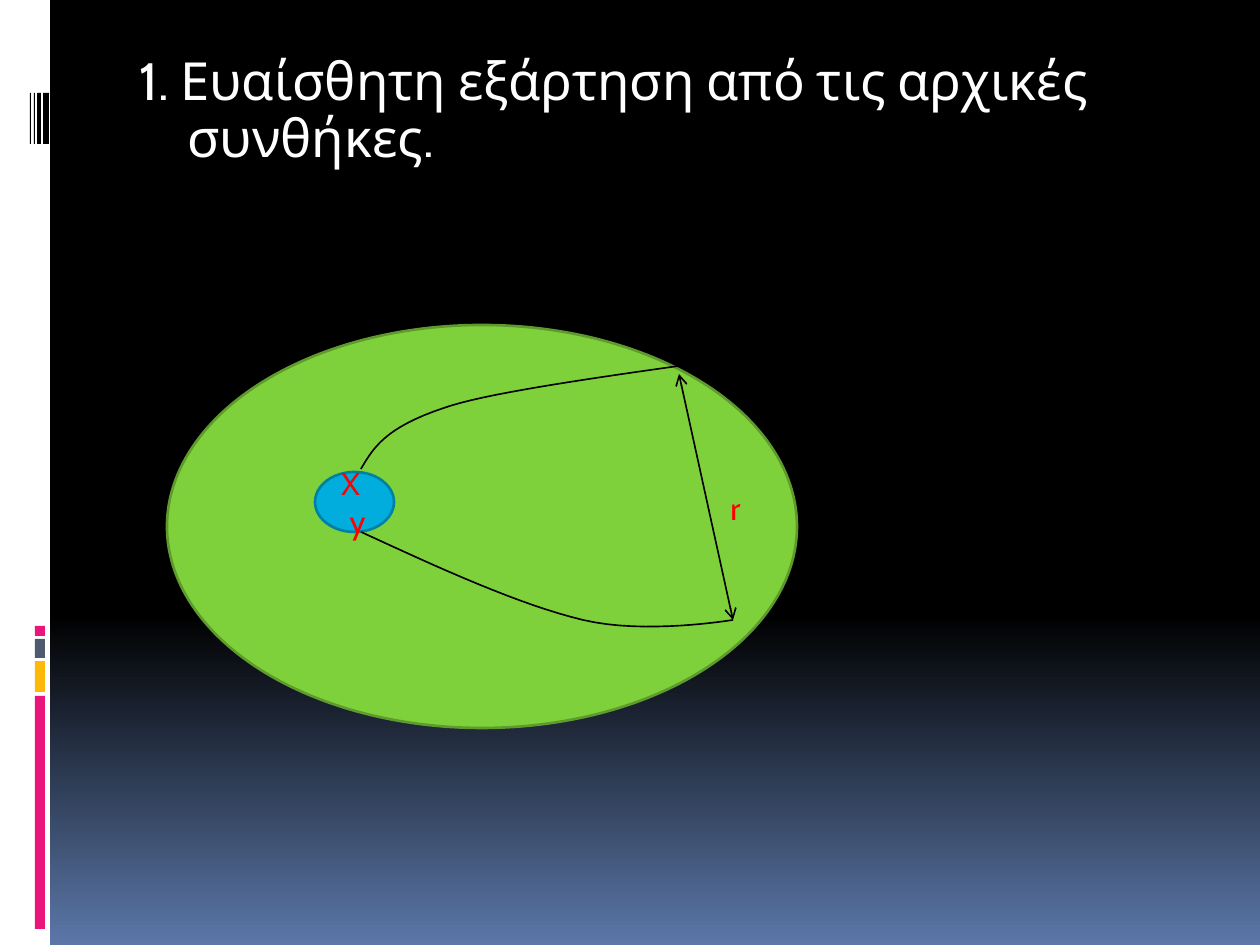
from lxml import etree
from pptx import Presentation
from pptx.dml.color import RGBColor
from pptx.enum.shapes import MSO_CONNECTOR, MSO_SHAPE
from pptx.enum.text import MSO_ANCHOR, PP_ALIGN
from pptx.oxml.ns import qn
from pptx.util import Pt

RECT, ELLIPSE = MSO_SHAPE.RECTANGLE, MSO_SHAPE.OVAL
STRAIGHT = MSO_CONNECTOR.STRAIGHT
MIDDLE, CENTER = MSO_ANCHOR.MIDDLE, PP_ALIGN.CENTER

BLACK = RGBColor(0x00, 0x00, 0x00)
WHITE = RGBColor(0xFF, 0xFF, 0xFF)
DUSK = RGBColor(0x5B, 0x77, 0xA8)
PINK = RGBColor(0xEA, 0x15, 0x7A)
AMBER = RGBColor(0xFE, 0xB8, 0x0A)
SLATE = RGBColor(0x4E, 0x5B, 0x6F)
GREEN = RGBColor(0x7F, 0xD1, 0x3B)
DARK_GREEN = RGBColor(0x5E, 0x9B, 0x2C)
BLUE = RGBColor(0x00, 0xAD, 0xDC)
DARK_BLUE = RGBColor(0x00, 0x80, 0xA3)
RED = RGBColor(0xFF, 0x00, 0x00)

FONT = "Cabin"
PX_PER_INCH = 126
WIDTH, HEIGHT = 1260, 945
CURVE_STEPS = 16


def px(length):
    return round(length * 914400 / PX_PER_INCH)


def style_text(paragraph, size, color):
    paragraph.font.name = FONT
    paragraph.font.size = Pt(size)
    paragraph.font.color.rgb = color


def add_filled(slide, preset, box, fill, line=None):
    shape = slide.shapes.add_shape(preset, *map(px, box))
    shape.shadow.inherit = False
    shape.fill.solid()
    shape.fill.fore_color.rgb = fill
    if line is None:
        shape.line.fill.background()
    else:
        shape.line.color.rgb = line
        shape.line.width = Pt(1.5)
    return shape


def bezier_points(start, controls):
    """Sample a chain of cubic curves, each given as two handles and an end."""
    points = [start]
    for first, second, end in controls:
        for step in range(1, CURVE_STEPS + 1):
            t = step / CURVE_STEPS
            u = 1 - t
            points.append(tuple(
                u**3 * a + 3 * u * u * t * b + 3 * u * t * t * c + t**3 * d
                for a, b, c, d in zip(start, first, second, end)))
        start = end
    return points


def add_trajectory(slide, left, top, start, controls):
    points = [(px(left + x), px(top + y))
              for x, y in bezier_points(start, controls)]
    builder = slide.shapes.build_freeform(*points[0])
    builder.add_line_segments(points[1:], close=False)
    curve = builder.convert_to_shape()
    curve.shadow.inherit = False
    curve.fill.background()
    curve.line.color.rgb = BLACK
    curve.line.width = Pt(0.94)


def add_distance_arrow(slide, x1, y1, x2, y2):
    arrow = slide.shapes.add_connector(STRAIGHT, *map(px, (x1, y1, x2, y2)))
    arrow.line.color.rgb = BLACK
    arrow.line.width = Pt(0.94)
    outline = arrow.line._get_or_add_ln()
    for end in ("a:headEnd", "a:tailEnd"):
        etree.SubElement(outline, qn(end), type="arrow")
    etree.SubElement(arrow._element.spPr, qn("a:effectLst"))


def set_background(slide):
    fill = slide.background.fill
    fill.gradient()
    fill.gradient_angle = 270
    for stop, position, color in zip(fill.gradient_stops, (0.65, 1), (BLACK, DUSK)):
        stop.position = position
        stop.color.rgb = color


def add_side_band(slide, left, top, width, height):
    add_filled(slide, RECT, (left, top, width, height), WHITE)
    for y, block_height, color in ((696, 233, PINK), (661, 31, AMBER),
                                   (639, 19, SLATE), (626, 10, PINK)):
        add_filled(slide, RECT, (left + 35, top + y, 10, block_height), color)
    for x, stripe_width in ((43, 6), (37, 4), (34, 1), (30, 1)):
        add_filled(slide, RECT, (left + x, top + 93, stripe_width, 51), BLACK)


def fill_statement(body, left, top, width, height):
    body.left, body.top, body.width, body.height = map(px, (left, top, width, height))
    statement = body.text_frame.paragraphs[0]
    statement.text = "1. Ευαίσθητη εξάρτηση από τις αρχικές συνθήκες."
    style_text(statement, 30, WHITE)
    statement.space_before = Pt(7)
    statement.line_spacing = 0.9
    properties = statement._p.get_or_add_pPr()
    properties.set("marL", str(px(57)))
    properties.set("indent", str(px(-48)))
    etree.SubElement(properties, qn("a:buNone"))
    # The bullet setting must precede the default run properties.
    properties.append(properties.find(qn("a:defRPr")))


def add_initial_points(slide, box):
    """The small neighbourhood holding the starting points X and y."""
    neighbourhood = add_filled(slide, ELLIPSE, box, BLUE, DARK_BLUE)
    frame = neighbourhood.text_frame
    frame.margin_left = frame.margin_right = 0
    frame.vertical_anchor = MIDDLE
    for point, side, inset in (("X", "marR", 8), ("y", "marL", 14)):
        paragraph = frame.paragraphs[0] if point == "X" else frame.add_paragraph()
        paragraph.text = point
        paragraph.alignment = CENTER
        style_text(paragraph, 18, RED)
        paragraph._p.get_or_add_pPr().set(side, str(px(inset)))


def add_phase_space(slide, left, top, width, height):
    add_filled(slide, ELLIPSE, (left, top, width, height), GREEN, DARK_GREEN)
    add_initial_points(slide, (left + 148, top + 147, 79, 60))
    add_trajectory(slide, left, top, (194, 144), [
        ((206, 124), (217, 103), (277, 83)),
        ((317, 69), (413, 55), (512, 41))])
    add_trajectory(slide, left, top, (194, 207), [
        ((274, 244), (353, 280), (416, 295)),
        ((478, 310), (566, 295), (566, 295))])
    add_distance_arrow(slide, left + 512, top + 49, left + 566, top + 295)
    label = slide.shapes.add_textbox(*map(px, (left + 551, top + 158, 37, 50)))
    label.text_frame.word_wrap = False
    distance = label.text_frame.paragraphs[0]
    distance.text = "r"
    style_text(distance, 18, RED)


def main():
    deck = Presentation()
    deck.slide_width, deck.slide_height = px(WIDTH), px(HEIGHT)
    slide = deck.slides.add_slide(deck.slide_layouts[1])
    title, body = slide.placeholders
    title._element.getparent().remove(title._element)
    set_background(slide)
    add_side_band(slide, 0, 0, 50, HEIGHT)
    fill_statement(body, 118, 49, 1079, 827)
    add_phase_space(slide, 167, 325, 630, 403)
    deck.save("out.pptx")


if __name__ == "__main__":
    main()
